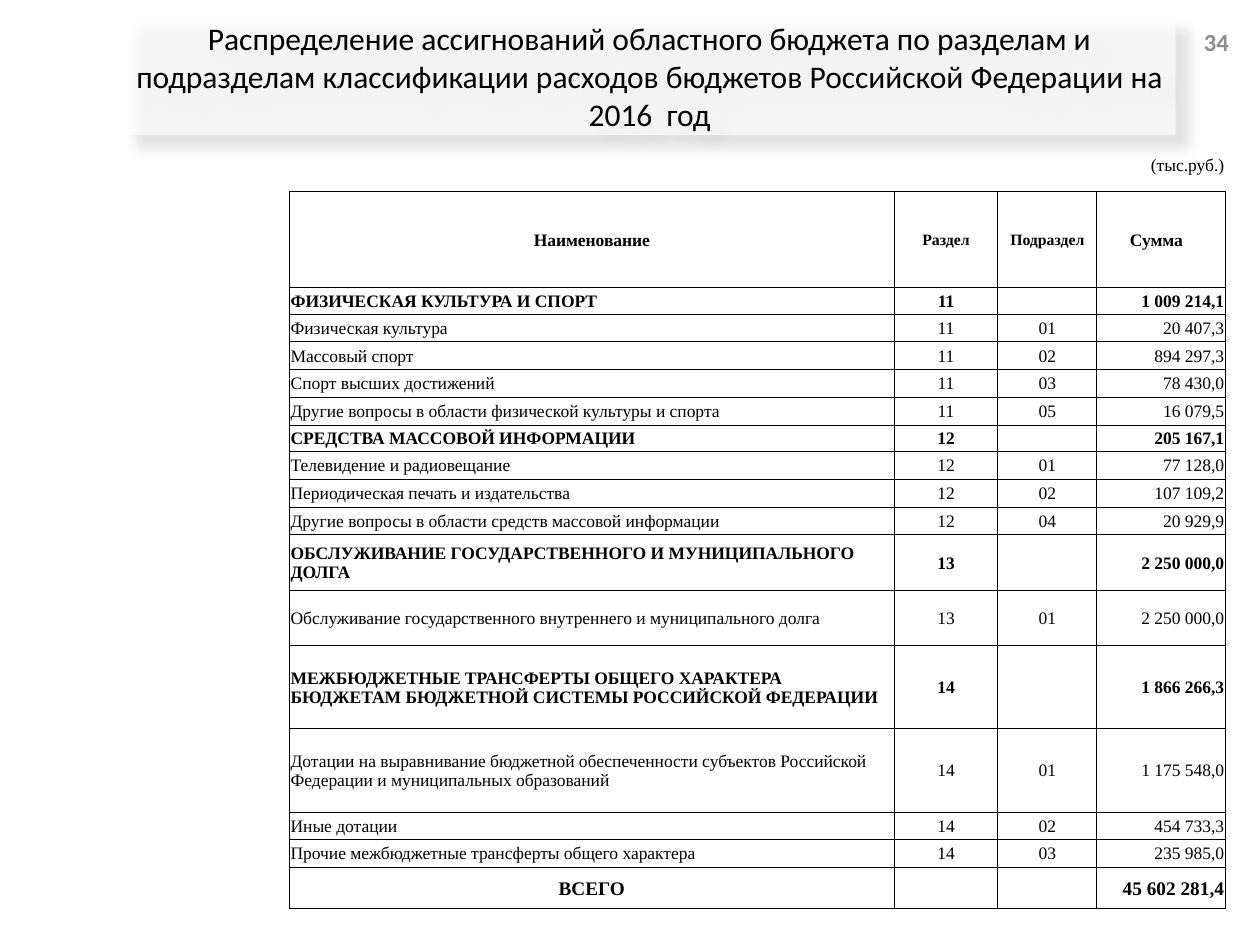
"""Build the budget allocation slide: a shadowed title, a page number and a table."""
from lxml import etree
from pptx import Presentation
from pptx.dml.color import RGBColor
from pptx.enum import text as enums
from pptx.oxml import parse_xml
from pptx.oxml.ns import nsdecls, qn
from pptx.util import Pt

theme = {
    "black": "000000", "white": "FFFFFF", "gray": "8C8C8C",
    "sans": "Calibri", "serif": "Times New Roman",
    "title": 18, "page": 14, "total": 11, "body": 10, "small": 9,
}
left, mid, right = enums.PP_ALIGN.LEFT, enums.PP_ALIGN.CENTER, enums.PP_ALIGN.RIGHT
middle, top = enums.MSO_ANCHOR.MIDDLE, enums.MSO_ANCHOR.TOP


def style(item, **vals):
    for name, val in vals.items():
        setattr(item, name, val)


def write(frame, words, align, size, face, color, bold=False):
    para = frame.paragraphs[0]
    para.alignment = align
    if words:
        run = para.add_run()
        run.text = words
        style(run.font, size=Pt(size), name=face, bold=bold)
        run.font.color.rgb = RGBColor.from_string(color)
    else:
        etree.SubElement(para._p, qn("a:endParaRPr"), sz=str(size * 100))


deck = Presentation()
style(deck, slide_width=Pt(720), slide_height=Pt(540))
slide = deck.slides.add_slide(deck.slide_layouts[5])
slide.background.fill.solid()
slide.background.fill.fore_color.rgb = RGBColor.from_string(theme["white"])

title = slide.shapes.title
style(title, left=Pt(70.6), top=Pt(9.4), width=Pt(601.2), height=Pt(67.7))
title.fill.solid()
title.fill.fore_color.rgb = RGBColor.from_string(theme["white"])
tint = title._element.spPr.find(".//" + qn("a:srgbClr"))
etree.SubElement(tint, qn("a:alpha"), val="65000")
title._element.spPr.append(parse_xml(
    f'<a:effectLst {nsdecls("a")}><a:outerShdw blurRad="{Pt(7)}" dist="{Pt(10)}" '
    f'dir="2700000" algn="tl" rotWithShape="0"><a:srgbClr val="{theme["black"]}">'
    '<a:alpha val="16000"/></a:srgbClr></a:outerShdw></a:effectLst>'))
style(title.text_frame, word_wrap=True, vertical_anchor=middle,
      auto_size=enums.MSO_AUTO_SIZE.NONE)
write(title.text_frame,
      "Распределение ассигнований областного бюджета по разделам и подразделам "
      "классификации расходов бюджетов Российской Федерации на 2016  год",
      mid, theme["title"], theme["sans"], theme["black"])

rows = [
    (20.9, "(тыс.руб.)", "", "", ""),
    (54.8, "Наименование", "Раздел", "Подраздел", "Сумма"),
    (15.2, "ФИЗИЧЕСКАЯ КУЛЬТУРА И СПОРТ", "11", "", "1 009 214,1"),
    (15.85, "Физическая культура", "11", "01", "20 407,3"),
    (15.85, "Массовый спорт", "11", "02", "894 297,3"),
    (15.85, "Спорт высших достижений", "11", "03", "78 430,0"),
    (15.85, "Другие вопросы в области физической культуры и спорта", "11", "05", "16 079,5"),
    (15.2, "СРЕДСТВА МАССОВОЙ ИНФОРМАЦИИ", "12", "", "205 167,1"),
    (15.85, "Телевидение и радиовещание", "12", "01", "77 128,0"),
    (15.85, "Периодическая печать и издательства", "12", "02", "107 109,2"),
    (15.85, "Другие вопросы в области средств массовой информации", "12", "04", "20 929,9"),
    (31.7, "ОБСЛУЖИВАНИЕ ГОСУДАРСТВЕННОГО И МУНИЦИПАЛЬНОГО ДОЛГА", "13", "", "2 250 000,0"),
    (31.7, "Обслуживание государственного внутреннего и муниципального долга",
     "13", "01", "2 250 000,0"),
    (47.5, "МЕЖБЮДЖЕТНЫЕ ТРАНСФЕРТЫ ОБЩЕГО ХАРАКТЕРА БЮДЖЕТАМ БЮДЖЕТНОЙ СИСТЕМЫ "
     "РОССИЙСКОЙ ФЕДЕРАЦИИ", "14", "", "1 866 266,3"),
    (47.5, "Дотации на выравнивание бюджетной обеспеченности субъектов Российской "
     "Федерации и муниципальных образований", "14", "01", "1 175 548,0"),
    (15.85, "Иные дотации", "14", "02", "454 733,3"),
    (15.85, "Прочие межбюджетные трансферты общего характера", "14", "03", "235 985,0"),
    (23.7, "ВСЕГО", "", "", "45 602 281,4"),
]
widths = [345.6, 59.2, 56.6, 73.4]
last = len(rows) - 1
table = slide.shapes.add_table(len(rows), len(widths), Pt(165.4), Pt(88.6),
                               Pt(sum(widths)), Pt(sum(row[0] for row in rows))).table
style(table, first_row=False, horz_banding=False)
for col, width in zip(table.columns, widths):
    col.width = Pt(width)

for i, (height, *words) in enumerate(rows):
    table.rows[i].height = Pt(height)
    bold = i > 0 and (i == 1 or not words[2])
    for j, word in enumerate(words):
        cell = table.cell(i, j)
        style(cell, margin_left=Pt(0.7), margin_right=Pt(0.7), margin_top=Pt(0.7),
              margin_bottom=0, vertical_anchor=middle if i else top)
        align = (left, mid, mid, right)[j]
        size = theme["body"]
        if i == 0:
            align = right
        elif i == 1:
            align = mid
            size = theme["small"] if j in (1, 2) else size
        elif i == last:
            align = align if j else mid
            size = theme["total"]
        write(cell.text_frame, word, align, size, theme["serif"], theme["black"], bold)
        props = cell._tc.get_or_add_tcPr()
        for side in "LRTB":
            line = etree.SubElement(props, qn("a:ln" + side), w=str(Pt(0.5)))
            if i or side == "B":
                ink = etree.SubElement(line, qn("a:solidFill"))
                etree.SubElement(ink, qn("a:srgbClr"), val=theme["black"])
            else:
                etree.SubElement(line, qn("a:noFill"))
        cell.fill.background()
table.cell(1, 3).margin_right = Pt(6)
table.cell(0, 0).merge(table.cell(0, 3))

page = slide.shapes.add_textbox(Pt(660.2), Pt(9.4), Pt(49), Pt(28.8)).text_frame
style(page, word_wrap=True, vertical_anchor=middle)
write(page, "34", right, theme["page"], theme["sans"], theme["gray"], True)

deck.save("out.pptx")
